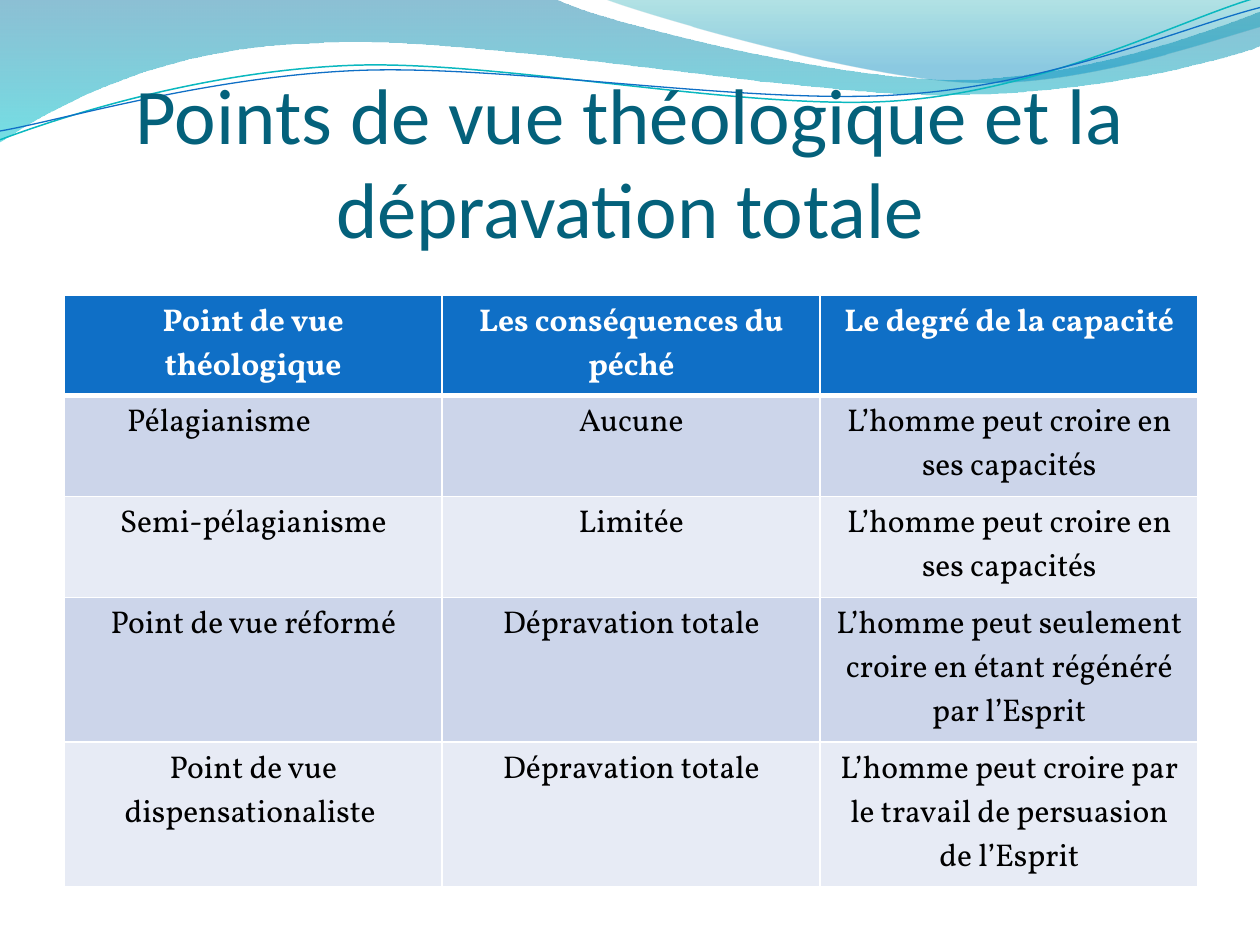
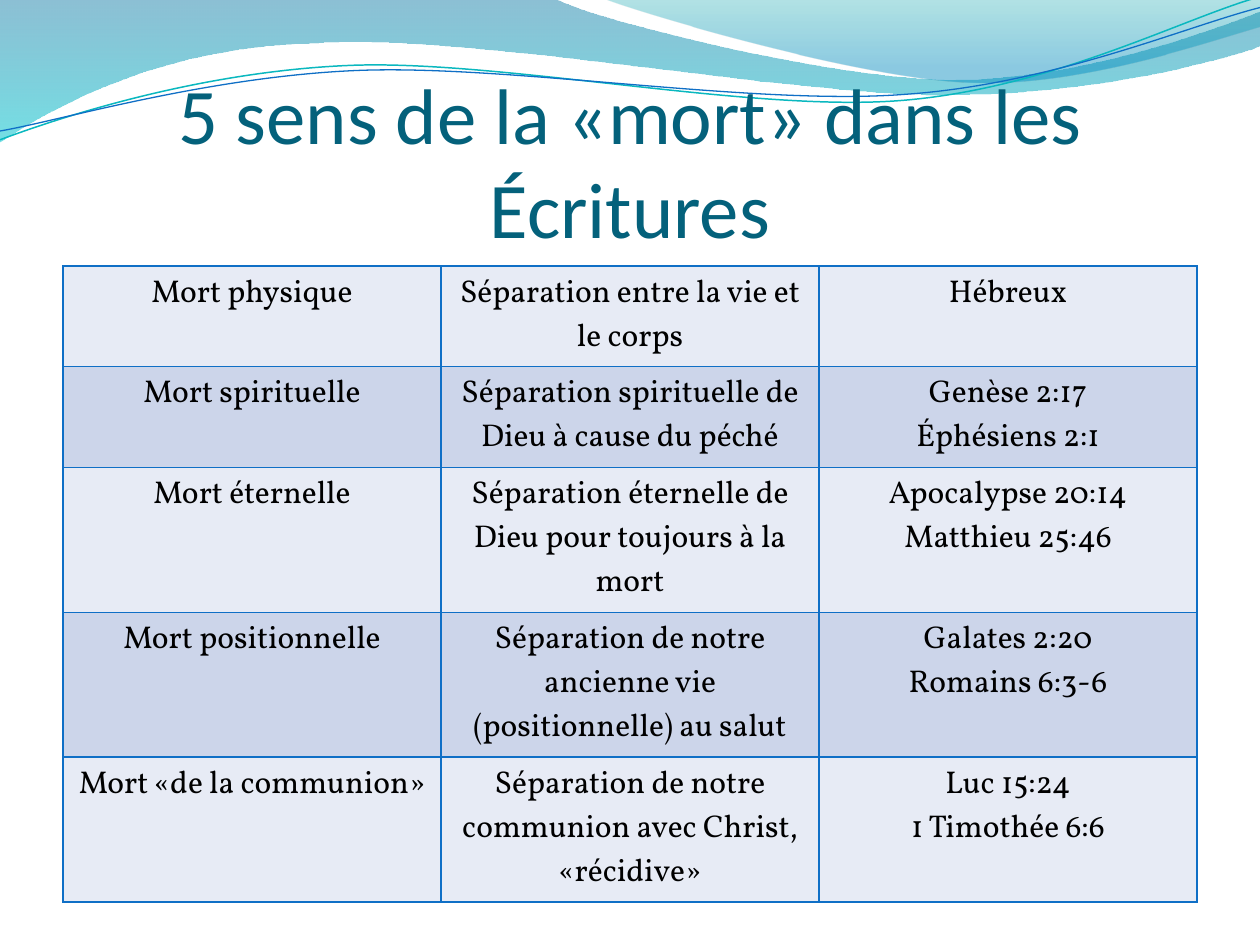
from dataclasses import dataclass

import lxml.etree
import pptx
import pptx.dml.color
import pptx.enum.text
import pptx.oxml.ns
import pptx.util
from pptx.util import Inches


@dataclass(frozen=True)
class Theme:
    title_font: str = "Calibri"
    table_font: str = "Vollkorn"
    title_size: float = 45
    table_size: float = 18
    title: str = "04617B"
    text: str = "000000"
    white: str = "FFFFFF"
    blue: str = "0F6FC6"
    teal: str = "0AB8BF"
    dark_band: str = "CCD5EA"
    light_band: str = "E7EBF5"


THEME = Theme()
RGB = pptx.dml.color.RGBColor.from_string
CENTER = pptx.enum.text.PP_ALIGN.CENTER
qn = pptx.oxml.ns.qn
TWO_LINES, THREE_LINES = 0.8, 1.15

# Each wave is a start point followed by steps: two numbers draw a straight
# line, six numbers draw a Bezier curve (two control points and an end).
# Gradient stops are (position, colour, opacity in percent).
FILLED_WAVES = [
    ([(0, 0), (4.4, -0.01), (4.76, 0.17, 6.64, 0.63, 7.58, 0.63),
      (8.53, 0.63, 9.58, 0.26, 10, 0.09), (10.01, 0.36),
      (9.83, 0.44, 8.7, 0.76, 7.46, 0.75), (6.22, 0.75, 3.82, 0.28, 2.57, 0.34),
      (1.29, 0.36, 0.46, 0.83, -0.01, 1.13), (0, 0)],
     [(0, "0074A1", 45), (1, "00C6CF", 55)]),
    ([(4.79, -0.01), (5.09, 0.11, 6.82, 0.62, 7.69, 0.65),
      (8.56, 0.69, 9.61, 0.32, 10, 0.21), (10, 0), (4.79, -0.01)],
     [(0, "00A1A9", 30), (0.8, "008BBF", 45)]),
]
LINE_WAVES = [
    ([(0, 1.11), (0.48, 0.93, 1.58, 0.57, 2.77, 0.52),
      (3.95, 0.47, 5.93, 0.89, 7.13, 0.8), (8.33, 0.71, 9.38, 0.15, 9.98, -0.02)],
     THEME.teal, 0.85),
    ([(0, 1.04), (0.47, 0.96, 1.64, 0.61, 2.83, 0.56),
      (4.03, 0.51, 5.97, 0.84, 7.17, 0.75), (8.36, 0.67, 9.41, 0.21, 10, 0.06)],
     THEME.blue, 0.75),
]

SLIDES = [
    {
        "title": "Points de vue théologique et la dépravation totale",
        "left": 0.51, "top": 2.34, "has_header": True, "border": THEME.white,
        "heights": [TWO_LINES] * 3 + [THREE_LINES] * 2,
        "rows": [
            ["Point de vue théologique", "Les conséquences du péché",
             "Le degré de la capacité"],
            ["Pélagianisme \t", "Aucune", "L’homme peut croire en ses capacités"],
            ["Semi-pélagianisme", "Limitée", "L’homme peut croire en ses capacités"],
            ["Point de vue réformé", "Dépravation totale",
             "L’homme peut seulement croire en étant régénéré par l’Esprit"],
            ["Point de vue dispensationaliste ", "Dépravation totale",
             "L’homme peut croire par le travail de persuasion de l’Esprit"],
        ],
    },
    {
        "title": "5 sens de la «mort» dans les Écritures",
        "left": 0.5, "top": 2.11, "has_header": False, "border": THEME.blue,
        "heights": [TWO_LINES] * 2 + [THREE_LINES] * 3,
        "rows": [
            ["Mort physique", "Séparation entre la vie et le corps", "Hébreux"],
            ["Mort spirituelle", "Séparation spirituelle de Dieu à cause du péché",
             "Genèse 2:17\nÉphésiens 2:1"],
            ["Mort éternelle", "Séparation éternelle de Dieu pour toujours à la mort",
             "Apocalypse 20:14\nMatthieu 25:46"],
            ["Mort positionnelle",
             "Séparation de notre ancienne vie (positionnelle) au salut",
             "Galates 2:20\nRomains 6:3-6"],
            ["Mort «de la communion»",
             "Séparation de notre communion avec Christ, «récidive»",
             "Luc 15:24\n1 Timothée 6:6"],
        ],
    },
]


def add_wave(slide, steps, close):
    """Draw a freeform through the end points, then bend its six-number steps."""
    start, *rest = [(Inches(step[-2]), Inches(step[-1])) for step in steps]
    builder = slide.shapes.build_freeform(*start, scale=1.0)
    builder.add_line_segments(rest, close=close)
    wave = builder.convert_to_shape()
    wave.shadow.inherit = False
    segments = list(wave._element.iter(qn("a:lnTo")))
    for segment, step in zip(segments, steps[1:]):
        if len(step) == 6:
            curve = lxml.etree.Element(qn("a:cubicBezTo"))
            for x, y in zip(step[::2], step[1::2]):
                lxml.etree.SubElement(curve, qn("a:pt"), x=str(Inches(x) - wave.left),
                                      y=str(Inches(y) - wave.top))
            segment.getparent().replace(segment, curve)
    return wave


def add_border(cell, side, color, width):
    """Give one side (L, R, T or B) of a cell a solid line; call before filling."""
    properties = cell._tc.get_or_add_tcPr()
    line = lxml.etree.SubElement(properties, qn(f"a:ln{side}"), w=str(pptx.util.Pt(width)))
    solid = lxml.etree.SubElement(line, qn("a:solidFill"))
    lxml.etree.SubElement(solid, qn("a:srgbClr"), val=color)


deck = pptx.Presentation()
deck.slide_width = Inches(10)
deck.slide_height = Inches(7.5)

for content in SLIDES:
    slide = deck.slides.add_slide(deck.slide_layouts[6])
    slide.background.fill.solid()
    slide.background.fill.fore_color.rgb = RGB(THEME.white)

    for steps, stops in FILLED_WAVES:
        wave = add_wave(slide, steps, close=True)
        wave.line.fill.background()
        wave.fill.gradient()
        wave.fill.gradient_angle = 270
        for stop, (position, color, opacity) in zip(wave.fill.gradient_stops, stops):
            stop.position = position
            stop.color.rgb = RGB(color)
            color_element = stop._gs.find(qn("a:srgbClr"))
            lxml.etree.SubElement(color_element, qn("a:alpha"), val=str(opacity * 1000))
    for steps, color, width in LINE_WAVES:
        wave = add_wave(slide, steps, close=False)
        wave.fill.background()
        wave.line.color.rgb = RGB(color)
        wave.line.width = pptx.util.Pt(width)

    title_box = slide.shapes.add_textbox(Inches(0.5), Inches(0.77), Inches(9), Inches(1.25))
    frame = title_box.text_frame
    frame.word_wrap = True
    frame.vertical_anchor = pptx.enum.text.MSO_ANCHOR.BOTTOM
    frame.margin_left = frame.margin_right = frame.margin_bottom = 0
    frame.margin_top = Inches(0.05)
    frame.text = content["title"]
    para = frame.paragraphs[0]
    para.alignment = CENTER
    para.font.name = THEME.title_font
    para.font.size = pptx.util.Pt(THEME.title_size)
    para.font.color.rgb = RGB(THEME.title)

    rows, heights = content["rows"], content["heights"]
    table = slide.shapes.add_table(
        len(rows), len(rows[0]), Inches(content["left"]), Inches(content["top"]),
        Inches(9), Inches(sum(heights))).table
    table.first_row = content["has_header"]
    table.horz_banding = False
    for row_index, (row, height) in enumerate(zip(rows, heights)):
        table.rows[row_index].height = Inches(height)
        is_header = content["has_header"] and row_index == 0
        below_header = content["has_header"] and row_index == 1
        band = THEME.dark_band if row_index % 2 else THEME.light_band
        for column_index, text in enumerate(row):
            cell = table.cell(row_index, column_index)
            for side in "LRTB":
                is_thick = (is_header and side == "B") or (below_header and side == "T")
                add_border(cell, side, content["border"], 3 if is_thick else 1)
            cell.fill.solid()
            cell.fill.fore_color.rgb = RGB(THEME.blue if is_header else band)
            cell.text = text
            for para in cell.text_frame.paragraphs:
                para.alignment = CENTER
                para.font.name = THEME.table_font
                para.font.size = pptx.util.Pt(THEME.table_size)
                para.font.bold = is_header
                para.font.color.rgb = RGB(THEME.white if is_header else THEME.text)

deck.save("out.pptx")
